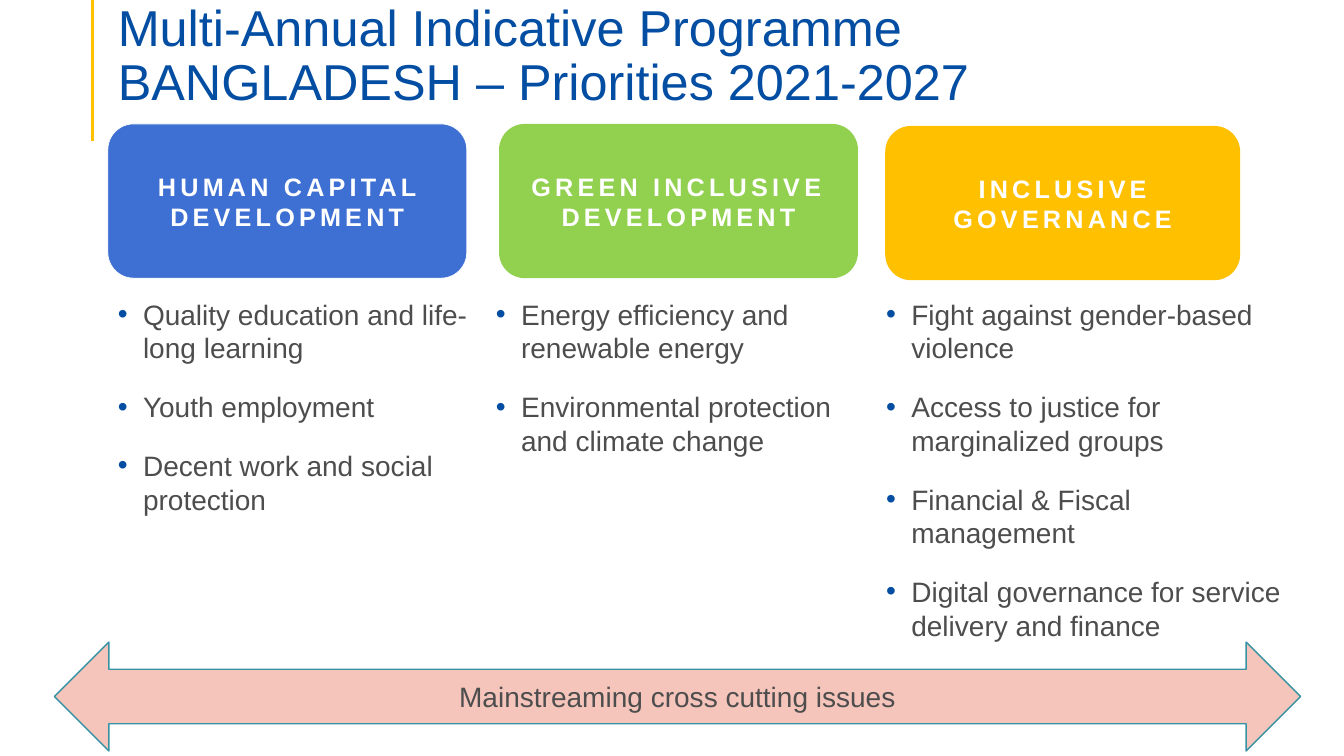
"""Build the Bangladesh programme priorities slide."""
from lxml import etree
from pptx import Presentation
from pptx import util as u
from pptx.dml.color import RGBColor
from pptx.enum import shapes, text
from pptx.oxml.ns import qn

PX = 9144
FONT = "Arial"
COLORS = {
    "title": "034EA2", "body": "4D4D4D", "white": "FFFFFF", "gold": "FFC000",
    "blue": "3E6FD2", "green": "92D050", "pink": "F5C4BA", "teal": "3792A4",
}
TITLE = ["Multi-Annual Indicative Programme", "BANGLADESH – Priorities 2021-2027"]
MAINSTREAMING = "Mainstreaming cross cutting issues"
CARD_HEIGHT, LIST_TOP = 153, 290
PRIORITIES = [
    {"heading": ["HUMAN CAPITAL", "DEVELOPMENT"], "fill": "blue", "line": "white",
     "card": (107, 123, 356), "list": (107, 375, 346),
     "items": ["Quality education and life-long learning", "Youth employment",
               "Decent work and social protection"]},
    {"heading": ["GREEN INCLUSIVE DEVELOPMENT"], "fill": "green", "line": None,
     "card": (495, 123, 356), "list": (482, 380, 324),
     "items": ["Energy efficiency and renewable energy",
               "Environmental protection and climate change"]},
    {"heading": ["INCLUSIVE", "GOVERNANCE"], "fill": "gold", "line": None,
     "card": (878, 125, 352), "list": (869, 421, 340),
     "items": ["Fight against gender-based violence",
               "Access to justice for marginalized groups",
               "Financial & Fiscal management",
               "Digital governance for service delivery and finance"]},
]


def px(*lengths):
    return [u.Emu(length * PX) for length in lengths]


def rgb(name):
    return RGBColor.from_string(COLORS[name])


def add_bullet(para):
    props = para._p.get_or_add_pPr()
    indent = 25 * PX
    props.set("marL", str(indent))
    props.set("indent", str(-indent))
    color = etree.SubElement(props, qn("a:buClr"))
    etree.SubElement(color, qn("a:srgbClr"), val=COLORS["title"])
    etree.SubElement(props, qn("a:buFont"), typeface=FONT)
    etree.SubElement(props, qn("a:buChar"), char="•")


def write(box, paragraphs, size=20, color="body", bold=False, tracking=0, align="LEFT",
          anchor="TOP", bullet=False, after=0, leading=None):
    """Fill a box; each paragraph is a list of lines."""
    frame = box.text_frame
    frame.word_wrap = True
    frame.vertical_anchor = getattr(text.MSO_ANCHOR, anchor)
    for index, lines in enumerate(paragraphs):
        para = frame.add_paragraph() if index else frame.paragraphs[0]
        para.alignment = getattr(text.PP_ALIGN, align)
        para.space_after = u.Pt(after)
        if leading:
            para.line_spacing = leading
        if bullet:
            add_bullet(para)
        for number, line in enumerate(lines):
            if number:
                para.add_line_break()
            span = para.add_run()
            span.text = line
            span.font.name, span.font.size, span.font.bold = FONT, u.Pt(size), bold
            span.font.color.rgb = rgb(color)
            if tracking:
                span.font._element.set("spc", str(tracking * 100))
    return frame


def add_block(page, kind, place, fill, line=None, width=1):
    block = page.shapes.add_shape(kind, *px(*place))
    block.shadow.inherit = False
    block.fill.solid()
    block.fill.fore_color.rgb = rgb(fill)
    if line:
        block.line.color.rgb = rgb(line)
        block.line.width = u.Pt(width)
    else:
        block.line.fill.background()
    return block


def add_title(page):
    rule = page.shapes.add_connector(shapes.MSO_CONNECTOR.STRAIGHT, *px(92, 0, 92, 140))
    rule.line.color.rgb = rgb("gold")
    rule.line.width = u.Pt(2.25)
    etree.SubElement(rule._element.spPr, qn("a:effectLst"))
    title = page.shapes.add_textbox(*px(107, 25, 1150, 86))
    frame = write(title, [TITLE], size=36, color="title", anchor="BOTTOM", leading=0.9)
    frame.margin_bottom = 0


def add_priority(page, priority):
    card = add_block(page, shapes.MSO_SHAPE.ROUNDED_RECTANGLE,
                     (*priority["card"], CARD_HEIGHT), priority["fill"],
                     priority["line"], width=0.5)
    write(card, [[line] for line in priority["heading"]], size=18, color="white",
          bold=True, tracking=3, align="CENTER", anchor="MIDDLE")
    left, width, height = priority["list"]
    items = page.shapes.add_textbox(*px(left, LIST_TOP, width, height))
    write(items, [[item] for item in priority["items"]], bullet=True, after=18)


def main():
    deck = Presentation()
    deck.slide_width, deck.slide_height = px(1333, 750)
    page = deck.slides.add_slide(deck.slide_layouts[6])
    add_title(page)
    for priority in PRIORITIES:
        add_priority(page, priority)
    arrow = add_block(page, shapes.MSO_SHAPE.LEFT_RIGHT_ARROW, (54, 637, 1236, 108),
                      "pink", "teal")
    write(arrow, [[MAINSTREAMING]], align="CENTER", anchor="MIDDLE")
    deck.save("out.pptx")


if __name__ == "__main__":
    main()
